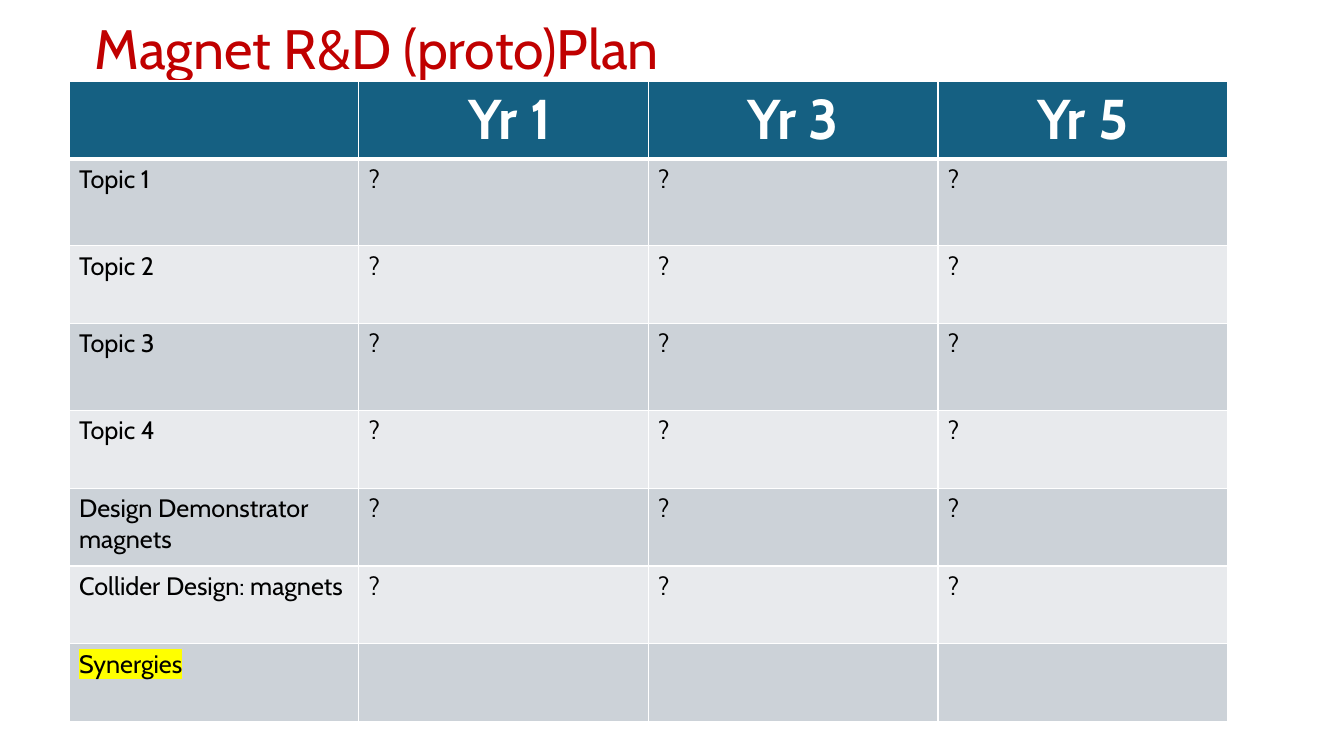
from dataclasses import dataclass

from lxml.etree import SubElement
from pptx import Presentation
from pptx.dml.color import RGBColor
from pptx.enum.text import MSO_ANCHOR, PP_ALIGN
from pptx.oxml import parse_xml
from pptx.oxml.ns import nsdecls, qn
from pptx.table import _Cell
from pptx.text.text import _Paragraph
from pptx.util import Cm, Pt

RED = RGBColor(0xC0, 0x00, 0x00)
WHITE = RGBColor(0xFF, 0xFF, 0xFF)
BLACK = RGBColor(0x00, 0x00, 0x00)
TEAL = RGBColor(0x15, 0x60, 0x82)
BAND_DARK = RGBColor(0xCC, 0xD2, 0xD8)
BAND_LIGHT = RGBColor(0xE8, 0xEA, 0xED)
YELLOW = RGBColor(0xFF, 0xFF, 0x00)

TITLE_FORMAT = {"name": "Cabin", "size": Pt(39.6), "bold": False}
HEADER_FORMAT = {"name": "Cabin", "size": Pt(40), "bold": True}
BODY_FORMAT = {"name": "Cabin", "size": Pt(18), "bold": False}

COLUMN_WIDTH = Cm(7.3)
HEADER_HEIGHT = Cm(1.96)


@dataclass
class PlanRow:
    label: str
    height: Cm = Cm(1.96)
    entry: str = "?"
    highlight: RGBColor | None = None


YEARS = ["", " Yr 1", "Yr 3", "Yr 5"]
PLAN = [
    PlanRow("Topic 1", Cm(2.19)),
    PlanRow("Topic 2"),
    PlanRow("Topic 3", Cm(2.19)),
    PlanRow("Topic 4"),
    PlanRow("Design Demonstrator magnets"),
    PlanRow("Collider Design: magnets"),
    PlanRow("Synergies", entry="", highlight=YELLOW),
]


def write(p: _Paragraph, text: str, style: dict, color: RGBColor,
          highlight: RGBColor | None = None) -> None:
    r = p.add_run()
    r.text = text
    for key, value in style.items():
        setattr(r.font, key, value)
    r.font.color.rgb = color
    if highlight is not None:
        mark = parse_xml(f'<a:highlight {nsdecls("a")}/>')
        SubElement(mark, qn("a:srgbClr"), val=str(highlight))
        # The highlight belongs right after the text fill
        r.font._element.find(qn("a:solidFill")).addnext(mark)


def paint_cell(cell: _Cell, fill: RGBColor, top: float = 1, bottom: float = 1) -> None:
    cell.fill.solid()
    cell.fill.fore_color.rgb = fill
    tc_pr = cell._tc.get_or_add_tcPr()
    widths = {"lnL": 1, "lnR": 1, "lnT": top, "lnB": bottom}
    for i, (side, width) in enumerate(widths.items()):
        tc_pr.insert(i, parse_xml(
            f'<a:{side} {nsdecls("a")} w="{Pt(width)}"><a:solidFill>'
            f'<a:srgbClr val="{WHITE}"/></a:solidFill></a:{side}>'))


def main() -> None:
    prs = Presentation()
    prs.slide_width, prs.slide_height = Cm(33.87), Cm(19.05)
    s = prs.slides.add_slide(prs.slide_layouts[6])

    # Title
    tf = s.shapes.add_textbox(Cm(2.13), Cm(0.38), Cm(29.21), Cm(1.85)).text_frame
    tf.word_wrap = True
    tf.vertical_anchor = MSO_ANCHOR.MIDDLE
    tf.paragraphs[0].line_spacing = 0.9
    write(tf.paragraphs[0], "Magnet R&D (proto)Plan", TITLE_FORMAT, RED)

    # Plan table
    heights = [HEADER_HEIGHT] + [row.height for row in PLAN]
    table = s.shapes.add_table(len(heights), len(YEARS), Cm(1.74), Cm(2.04),
                               COLUMN_WIDTH * len(YEARS), sum(heights)).table
    for column in table.columns:
        column.width = COLUMN_WIDTH
    for row, height in zip(table.rows, heights):
        row.height = height

    # Header row
    for cell, year in zip(table.rows[0].cells, YEARS):
        paint_cell(cell, TEAL, bottom=3)
        cell.vertical_anchor = MSO_ANCHOR.MIDDLE
        p = cell.text_frame.paragraphs[0]
        p.alignment = PP_ALIGN.CENTER
        if year:
            write(p, year, HEADER_FORMAT, WHITE)

    # Topic rows in alternating bands
    for i, plan_row in enumerate(PLAN):
        for j, cell in enumerate(table.rows[i + 1].cells):
            paint_cell(cell, BAND_LIGHT if i % 2 else BAND_DARK, top=1 if i else 3)
            text = plan_row.entry if j else plan_row.label
            if text:
                write(cell.text_frame.paragraphs[0], text, BODY_FORMAT, BLACK,
                      plan_row.highlight)

    prs.save("out.pptx")


if __name__ == "__main__":
    main()
